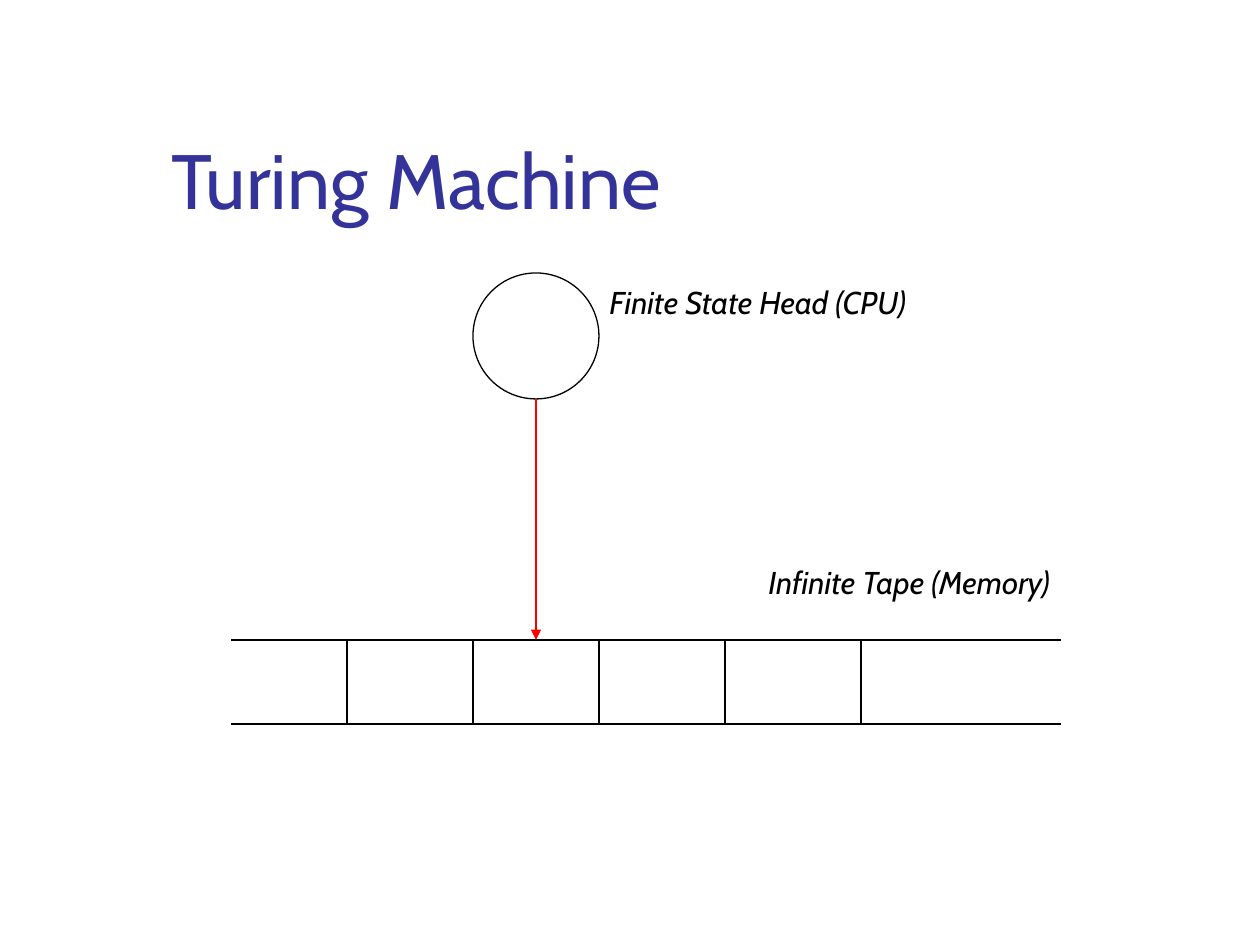
import pptx
import pptx.dml.color
import pptx.enum.shapes
import pptx.enum.text
import pptx.oxml
import pptx.oxml.ns
import pptx.util

BLACK = pptx.dml.color.RGBColor(0x00, 0x00, 0x00)
RED = pptx.dml.color.RGBColor(0xFF, 0x00, 0x00)
INDIGO = pptx.dml.color.RGBColor(0x33, 0x33, 0x99)
PX_PER_INCH = 126
FONT = "Cabin"


def px(length):
    """Turn a length in px into EMU."""
    return pptx.util.Emu(round(length * 914400 / PX_PER_INCH))


def write(frame, text, size=18, color=BLACK, italic=False, wrap=True,
          anchor=pptx.enum.text.MSO_ANCHOR.TOP,
          fit=pptx.enum.text.MSO_AUTO_SIZE.SHAPE_TO_FIT_TEXT):
    """Fill a text frame with one left-aligned formatted line."""
    frame.word_wrap = wrap
    frame.auto_size = fit
    frame.vertical_anchor = anchor
    paragraph = frame.paragraphs[0]
    paragraph.alignment = pptx.enum.text.PP_ALIGN.LEFT
    run = paragraph.add_run()
    run.text = text
    run.font.name = FONT
    run.font.size = pptx.util.Pt(size)
    run.font.italic = italic
    run.font.color.rgb = color


def draw_line(slide, x1, y1, x2, y2, color=BLACK, arrow=False):
    """Draw a thin straight line, with an arrowhead at its end if asked."""
    line = slide.shapes.add_connector(
        pptx.enum.shapes.MSO_CONNECTOR.STRAIGHT, px(x1), px(y1), px(x2), px(y2))
    line.line.color.rgb = color
    line.line.width = pptx.util.Pt(0.75)
    if arrow:
        tip = pptx.oxml.parse_xml(
            f'<a:tailEnd {pptx.oxml.ns.nsdecls("a")} type="triangle"/>')
        line.line._get_or_add_ln().append(tip)
    line._element.spPr.append(
        pptx.oxml.parse_xml(f'<a:effectLst {pptx.oxml.ns.nsdecls("a")}/>'))


def add_label(slide, text, left, top, width, height, wrap=True):
    """Place an italic caption in the given box."""
    caption = slide.shapes.add_textbox(px(left), px(top), px(width), px(height))
    write(caption.text_frame, text, italic=True, wrap=wrap)


def add_title(slide, left, top, width, height):
    """Move the title placeholder into the given box and fill it."""
    title = slide.shapes.title
    title.left, title.top = px(left), px(top)
    title.width, title.height = px(width), px(height)
    write(title.text_frame, "Turing Machine", size=44, color=INDIGO,
          anchor=pptx.enum.text.MSO_ANCHOR.BOTTOM,
          fit=pptx.enum.text.MSO_AUTO_SIZE.NONE)


def add_tape(slide, left, top, width, height):
    """Draw the open-ended tape, its cell dividers and its caption."""
    for edge in (top, top + height):
        draw_line(slide, left, edge, left + width, edge)
    for offset in (116, 242, 368, 494, 630):
        draw_line(slide, left + offset, top, left + offset, top + height)
    add_label(slide, "Infinite Tape (Memory)", left + 525, top - 83, 348, 50,
              wrap=False)


def add_head(slide, left, top, diameter, reach):
    """Draw the head, its caption and the arrow reaching down to the tape."""
    head = slide.shapes.add_shape(
        pptx.enum.shapes.MSO_SHAPE.OVAL,
        px(left), px(top), px(diameter), px(diameter))
    head.shadow.inherit = False
    head.fill.background()
    head.line.color.rgb = BLACK
    head.line.width = pptx.util.Pt(0.75)
    center, bottom = left + diameter // 2, top + diameter
    draw_line(slide, center, bottom, center, bottom + reach, RED, arrow=True)
    add_label(slide, "Finite State Head (CPU)",
              left + diameter - 2, top + 4, 412, 50)


def main():
    """Build and save the slide."""
    deck = pptx.Presentation()
    deck.slide_width, deck.slide_height = px(1260), px(945)
    slide = deck.slides.add_slide(deck.slide_layouts.get_by_name("Title Only"))
    add_title(slide, 159, 29, 1074, 202)
    add_tape(slide, 231, 640, 830, 84)
    add_head(slide, 473, 273, 126, 241)
    deck.save("out.pptx")


if __name__ == "__main__":
    main()
